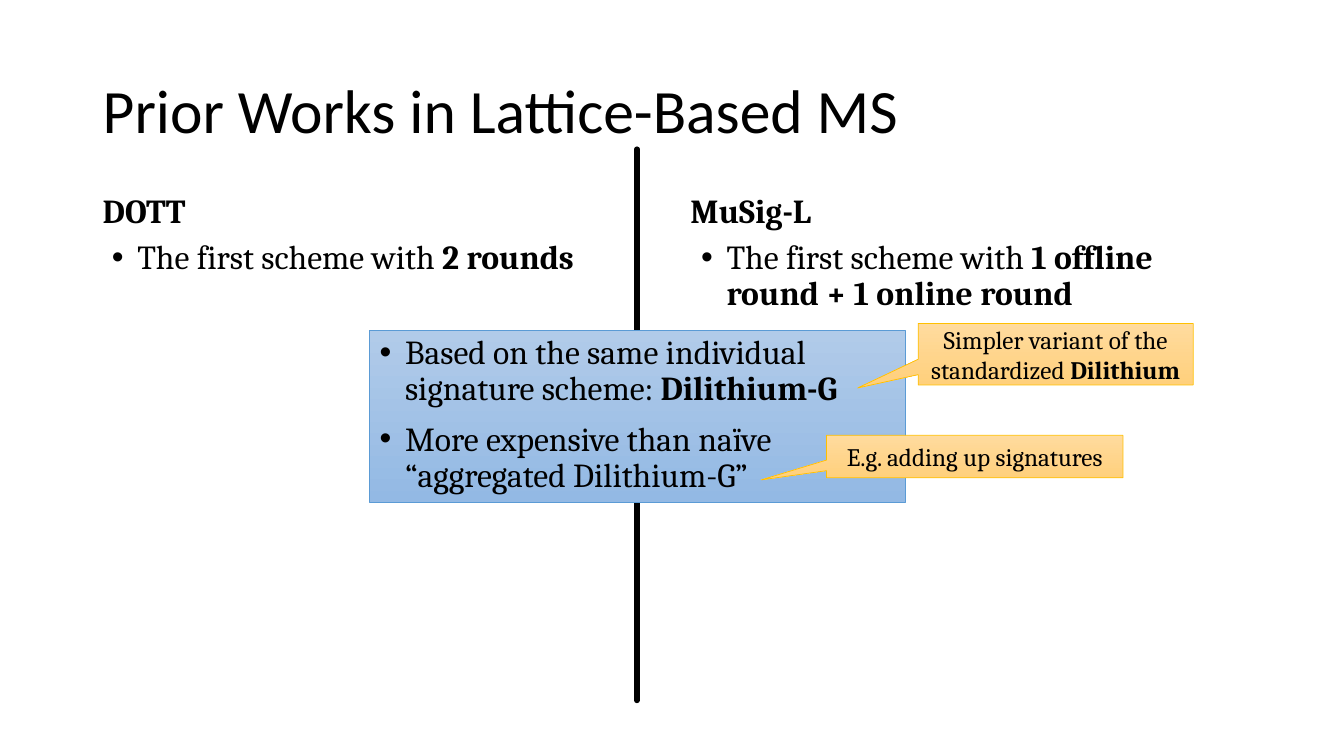
"""Builds a slide comparing two lattice-based multi-signature schemes."""
import lxml.etree
import pptx
import pptx.dml.color
import pptx.enum.shapes
import pptx.enum.text
import pptx.oxml.ns
import pptx.util

Cm = pptx.util.Cm
Pt = pptx.util.Pt
RGBColor = pptx.dml.color.RGBColor
ANCHOR = pptx.enum.text.MSO_ANCHOR
ALIGN = pptx.enum.text.PP_ALIGN
SHAPE = pptx.enum.shapes.MSO_SHAPE
qn = pptx.oxml.ns.qn

BLACK = RGBColor(0x00, 0x00, 0x00)
BLUE_LINE = RGBColor(0x5B, 0x9B, 0xD5)
BLUE_GRADIENT = RGBColor(0xB1, 0xCB, 0xE9), RGBColor(0x93, 0xB9, 0xE4)
GOLD_LINE = RGBColor(0xFF, 0xC0, 0x00)
GOLD_GRADIENT = RGBColor(0xFF, 0xDB, 0x9E), RGBColor(0xFF, 0xD0, 0x7C)


def write_text(shape, *texts, font="Cambria", size=24, anchor=ANCHOR.TOP,
               align=ALIGN.LEFT, spacing=0.9, bullet=False):
    """Write one paragraph per text; parts between ** marks are bold."""
    frame = shape.text_frame
    frame.word_wrap = True
    frame.vertical_anchor = anchor
    for index, text in enumerate(texts):
        paragraph = frame.add_paragraph() if index else frame.paragraphs[0]
        if bullet:
            properties = paragraph._p.get_or_add_pPr()
            properties.set("marL", str(Cm(0.64)))
            properties.set("indent", str(-Cm(0.64)))
            lxml.etree.SubElement(properties, qn("a:buFont"), typeface="Arial")
            lxml.etree.SubElement(properties, qn("a:buChar"), char="•")
        paragraph.alignment = align
        paragraph.line_spacing = spacing
        if index:
            paragraph.space_before = Pt(10)
        for part, words in enumerate(text.split("**")):
            if words:
                run = paragraph.add_run()
                run.text = words
                run.font.name = font
                run.font.size = Pt(size)
                run.font.bold = part % 2 == 1
                run.font.color.rgb = BLACK


class SlideBuilder:
    """Holds the style and the current slide."""

    def __init__(self, slide, line_width=0.5):
        self.slide = slide
        self.line_width = line_width

    def text(self, box, *texts, **style):
        """Add a text box."""
        shape = self.slide.shapes.add_textbox(*map(Cm, box))
        write_text(shape, *texts, **style)

    def panel(self, kind, box, gradient, line_color, *texts, **style):
        """Add a gradient-filled shape with text."""
        shape = self.slide.shapes.add_shape(kind, *map(Cm, box))
        shape.shadow.inherit = False
        shape.fill.gradient()
        shape.fill.gradient_angle = 270
        for stop, color, position in zip(shape.fill.gradient_stops, gradient, (0, 1)):
            stop.color.rgb = color
            stop.position = position
        shape.line.color.rgb = line_color
        shape.line.width = Pt(self.line_width)
        write_text(shape, *texts, **style)
        return shape

    def callout(self, box, text):
        """Add a gold callout pointing down to the left."""
        shape = self.panel(SHAPE.RECTANGULAR_CALLOUT, box, GOLD_GRADIENT, GOLD_LINE, text,
                           size=18, anchor=ANCHOR.MIDDLE, align=ALIGN.CENTER, spacing=1.0)
        shape.adjustments[0] = -0.72
        shape.adjustments[1] = 0.55

    def divider(self, x, top, bottom):
        """Add a thick vertical line with round ends."""
        connector = self.slide.shapes.add_connector(
            pptx.enum.shapes.MSO_CONNECTOR.STRAIGHT, Cm(x), Cm(top), Cm(x), Cm(bottom))
        connector.line.color.rgb = BLACK
        connector.line.width = Pt(4)
        properties = connector._element.spPr
        properties.find(qn("a:ln")).set("cap", "rnd")
        lxml.etree.SubElement(properties, qn("a:effectLst"))


def main():
    """Build and save the presentation."""
    presentation = pptx.Presentation()
    presentation.slide_width = Cm(33.87)
    presentation.slide_height = Cm(19.05)
    builder = SlideBuilder(presentation.slides.add_slide(presentation.slide_layouts[6]))

    builder.divider(16.05, 3.76, 17.65)
    builder.text((2.34, 1.02, 29.21, 3.68), "Prior Works in Lattice-Based MS",
                 font="Calibri", size=44, anchor=ANCHOR.MIDDLE)
    schemes = (
        (2.34, 2.57, "DOTT", "The first scheme with **2 rounds**"),
        (17.15, 17.42, "MuSig-L", "The first scheme with **1 offline round + 1 online round**"),
    )
    for heading_left, body_left, name, feature in schemes:
        builder.text((heading_left, 4.67, 14, 1.27), f"**{name}**", anchor=ANCHOR.BOTTOM)
        builder.text((body_left, 5.94, 13.51, 5.28), feature, bullet=True)

    builder.panel(SHAPE.RECTANGLE, (9.32, 8.33, 13.51, 4.32), BLUE_GRADIENT, BLUE_LINE,
                  "Based on the same individual signature scheme: **Dilithium-G**",
                  "More expensive than naïve “aggregated Dilithium-G”", bullet=True)
    builder.callout((23.14, 8.15, 6.93, 1.55),
                    "Simpler variant of the standardized **Dilithium**")
    builder.callout((20.83, 10.97, 7.47, 1.07), "E.g. adding up signatures")
    presentation.save("out.pptx")


if __name__ == "__main__":
    main()
